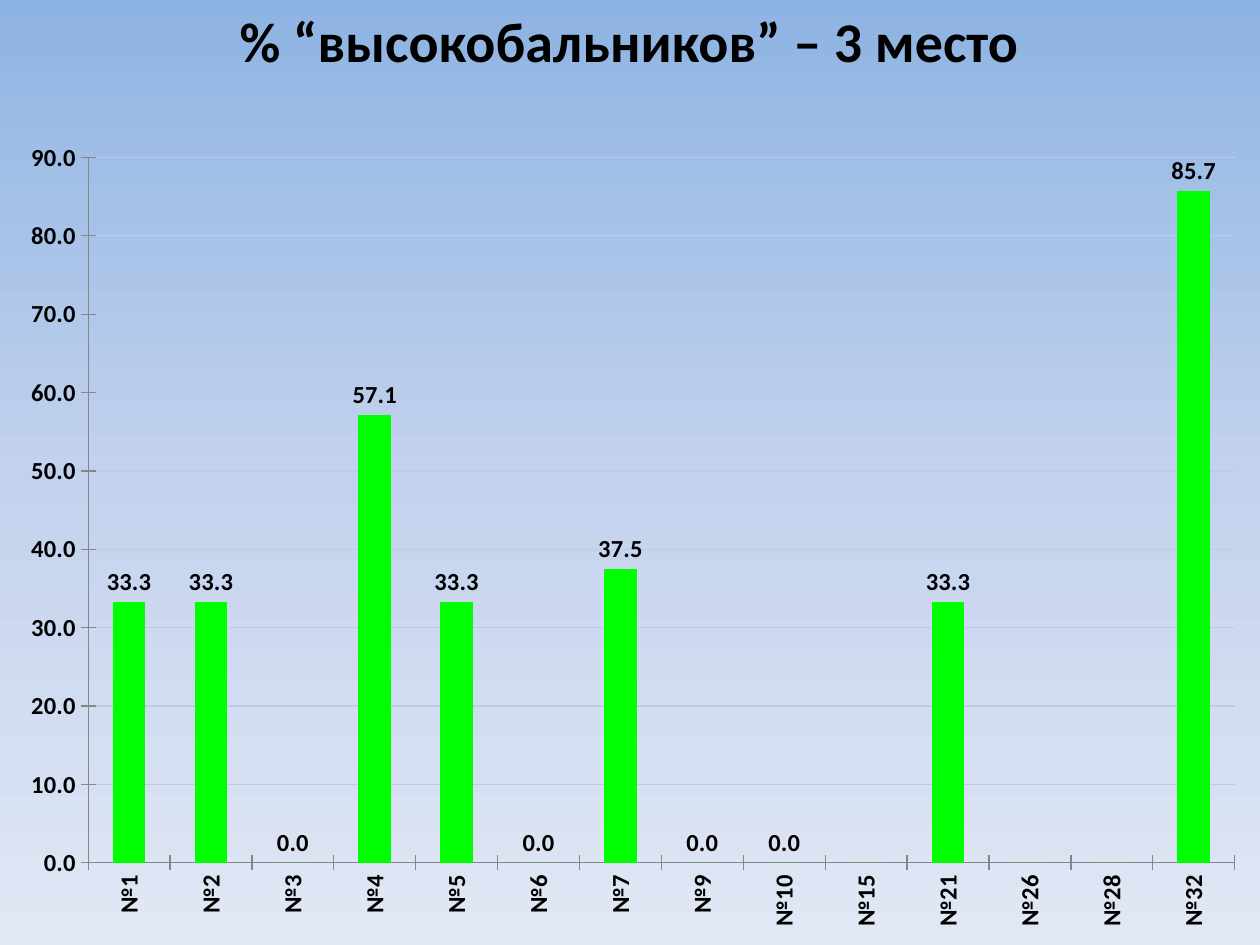
from copy import deepcopy
from dataclasses import dataclass

from pptx import Presentation, oxml, util as u
from pptx.chart.data import CategoryChartData
from pptx.dml.color import RGBColor
from pptx.enum import chart as charts, text
from pptx.oxml import ns


@dataclass(frozen=True)
class Theme:
    font: str = "Calibri"
    ink: str = "000000"
    bar: str = "00FF00"
    grid: str = "B9CDE5"
    axis: str = "868686"
    background: tuple = ((0, "8EB4E3"), (0.5, "C2D1ED"), (1, "E1E8F5"))
    title_size: int = 32
    label_size: int = 14


THEME = Theme()
RESULTS = {
    "№1": 33.3, "№2": 33.3, "№3": 0, "№4": 57.1, "№5": 33.3,
    "№6": 0, "№7": 37.5, "№9": 0, "№10": 0, "№15": 0,
    "№21": 33.3, "№26": 0, "№28": 0, "№32": 85.7,
}
UNLABELLED = ("№15", "№26", "№28")


def format_font(font, size, color, bold=True):
    font.name = THEME.font
    font.size = u.Pt(size)
    font.bold = bold
    font.color.rgb = RGBColor.from_string(color)


def write_text(frame, content, alignment=text.PP_ALIGN.CENTER, **style):
    paragraph = frame.paragraphs[0]
    paragraph.alignment = alignment
    run = paragraph.add_run()
    run.text = content
    format_font(run.font, **style)


def chart_element(tag, *children, **attributes):
    element = oxml.parse_xml(f"<c:{tag} {ns.nsdecls('c')}/>")
    for name, value in attributes.items():
        element.set(name, str(value))
    element.extend(children)
    return element


class SlideBuilder:
    """Draws styled elements on the current slide."""

    def __init__(self, slide, theme):
        self.slide = slide
        self.theme = theme

    def background(self):
        fill = self.slide.background.fill
        fill.gradient()
        fill.gradient_angle = 270
        stops = self.slide.element.find(".//" + ns.qn("a:gsLst"))
        stops.insert(1, deepcopy(stops[0]))
        for stop, (position, color) in zip(fill.gradient_stops, self.theme.background):
            stop.position = position
            stop.color.rgb = RGBColor.from_string(color)

    def title(self, content, left, top, width, height):
        box = self.slide.shapes.add_textbox(left, top, width, height)
        box.text_frame.word_wrap = False
        box.text_frame.auto_size = text.MSO_AUTO_SIZE.SHAPE_TO_FIT_TEXT
        write_text(box.text_frame, content, size=self.theme.title_size, color=self.theme.ink)

    def column_chart(self, results, unlabelled, left, top, width, height):
        data = CategoryChartData(number_format="0.0")
        data.categories = list(results)
        data.add_series("Series 1", list(results.values()))
        chart = self.slide.shapes.add_chart(
            charts.XL_CHART_TYPE.COLUMN_CLUSTERED, left, top, width, height, data
        ).chart
        chart.has_legend = chart.has_title = False
        format_font(chart.font, 10, self.theme.ink, bold=False)

        plot = chart.plots[0]
        plot.gap_width = 150
        plot.vary_by_categories = False
        series = plot.series[0]
        series.format.fill.solid()
        series.format.fill.fore_color.rgb = RGBColor.from_string(self.theme.bar)

        for axis in (chart.category_axis, chart.value_axis):
            self.axis(axis)
        value_axis = chart.value_axis
        value_axis.minimum_scale, value_axis.maximum_scale = 0, 90
        value_axis.major_unit = 10
        value_axis.tick_labels.number_format = "0.0"
        value_axis.tick_labels.number_format_is_linked = False
        value_axis.has_major_gridlines = True
        self.line(value_axis.major_gridlines.format.line, self.theme.grid)
        body = chart.element.find(f".//{ns.qn('c:catAx')}/{ns.qn('c:txPr')}/{ns.qn('a:bodyPr')}")
        body.set("rot", "-5400000")
        body.set("vert", "horz")

        self.data_labels(chart, series, [list(results).index(name) for name in unlabelled])
        self.plot_layout(chart, x=0.07, y=0.04, w=0.91, h=0.86)

    def line(self, line, color):
        line.color.rgb = RGBColor.from_string(color)
        line.width = u.Pt(0.75)

    def axis(self, axis):
        axis.major_tick_mark = charts.XL_TICK_MARK.CROSS
        axis.minor_tick_mark = charts.XL_TICK_MARK.NONE
        self.line(axis.format.line, self.theme.axis)
        format_font(axis.tick_labels.font, self.theme.label_size, self.theme.ink)

    def data_labels(self, chart, series, hidden):
        labels = series.data_labels
        labels.show_value = True
        labels.number_format = "0.0"
        labels.number_format_is_linked = False
        labels.position = charts.XL_LABEL_POSITION.OUTSIDE_END
        format_font(labels.font, self.theme.label_size, self.theme.ink)
        element = chart.element.find(f".//{ns.qn('c:ser')}/{ns.qn('c:dLbls')}")
        for place, index in enumerate(hidden):
            element.insert(place, chart_element(
                "dLbl", chart_element("idx", val=index), chart_element("delete", val=1)))

    def plot_layout(self, chart, **fractions):
        area = chart.element.find(".//" + ns.qn("c:plotArea"))
        for layout in area.findall(ns.qn("c:layout")):
            area.remove(layout)
        manual = chart_element(
            "manualLayout",
            chart_element("layoutTarget", val="inner"),
            *(chart_element(f"{axis}Mode", val="edge") for axis in "xy"),
            *(chart_element(name, val=value) for name, value in fractions.items()),
        )
        area.insert(0, chart_element("layout", manual))


def main():
    presentation = Presentation()
    presentation.slide_width = u.Inches(10)
    presentation.slide_height = u.Inches(7.5)
    slide = presentation.slides.add_slide(presentation.slide_layouts[6])
    builder = SlideBuilder(slide, THEME)
    builder.background()
    builder.title("% “высокобальников” – 3 место",
                  u.Inches(1.77), u.Inches(0), u.Inches(6.45), u.Inches(0.64))
    builder.column_chart(RESULTS, UNLABELLED,
                         u.Inches(0), u.Inches(0.99), u.Inches(10), u.Inches(6.51))
    presentation.save("out.pptx")


if __name__ == "__main__":
    main()
